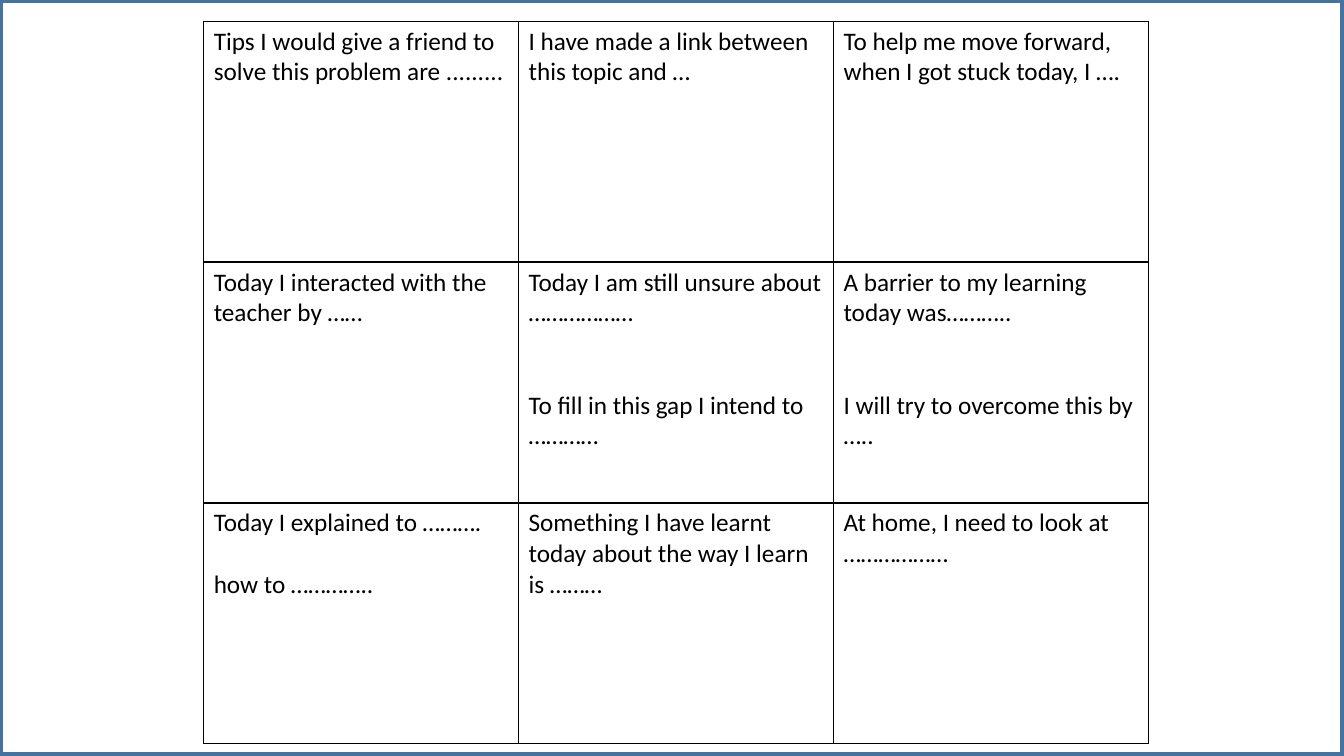
from lxml.etree import SubElement
from pptx import Presentation
from pptx.dml.color import RGBColor
from pptx.enum.shapes import MSO_SHAPE
from pptx.oxml.ns import qn
from pptx.util import Inches, Pt

LINE = 22  # height in points of one 18 pt line of Calibri

# Each cell: its paragraphs, then the number of lines left open between them
PROMPTS = [
    [
        (["Tips I would give a friend to solve this problem are ........."], 0),
        (["I have made a link between this topic and …"], 0),
        (["To help me move forward, when I got stuck today, I …."], 0),
    ],
    [
        (["Today I interacted with the teacher by ……"], 0),
        (["Today I am still unsure about ………………",
          "To fill in this gap I intend to …………"], 2),
        (["A barrier to my learning today was………..",
          "I will try to overcome this by ….."], 2),
    ],
    [
        (["Today I explained to ……….", "how to ………….."], 1),
        (["Something I have learnt today about the way I learn is ………"], 0),
        (["At home, I need to look at ………………"], 0),
    ],
]


def color(hex_value):
    return RGBColor.from_string(hex_value)


def set_borders(cell, hex_value, width):
    tcPr = cell._tc.get_or_add_tcPr()
    for i, side in enumerate(("a:lnL", "a:lnR", "a:lnT", "a:lnB")):
        ln = SubElement(tcPr, qn(side), w=str(Pt(width)))
        fill = SubElement(ln, qn("a:solidFill"))
        SubElement(fill, qn("a:srgbClr"), val=hex_value)
        tcPr.insert(i, ln)  # borders come before the cell fill


def fill_cell(cell, paragraphs, open_lines):
    cell.fill.background()
    set_borders(cell, "000000", 1)
    tf = cell.text_frame
    for i, text in enumerate(paragraphs):
        p = tf.add_paragraph() if i else tf.paragraphs[0]
        p.text = text
        p.font.name = "Calibri"
        p.font.size = Pt(18)
        p.font.color.rgb = color("000000")
        if i:
            p.space_before = Pt(open_lines * LINE)


def add_prompt_grid(s, left, top, width, height):
    rows, cols = len(PROMPTS), len(PROMPTS[0])
    table = s.shapes.add_table(rows, cols, left, top, width, height).table
    table.first_row = False
    table.horz_banding = False
    for r, prompts in enumerate(PROMPTS):
        for c, (paragraphs, open_lines) in enumerate(prompts):
            fill_cell(table.cell(r, c), paragraphs, open_lines)


def add_frame(s, left, top, width, height):
    sp = s.shapes.add_shape(MSO_SHAPE.RECTANGLE, left, top, width, height)
    sp.shadow.inherit = False
    sp.fill.background()
    sp.line.color.rgb = color("43739E")
    sp.line.width = Pt(5)


def main():
    prs = Presentation()
    prs.slide_width, prs.slide_height = Inches(13.33), Inches(7.5)
    s = prs.slides.add_slide(prs.slide_layouts[6])
    add_prompt_grid(s, Inches(2.02), Inches(0.21), Inches(9.37), Inches(7.17))
    add_frame(s, 0, 0, prs.slide_width, prs.slide_height)
    prs.save("out.pptx")


if __name__ == "__main__":
    main()
